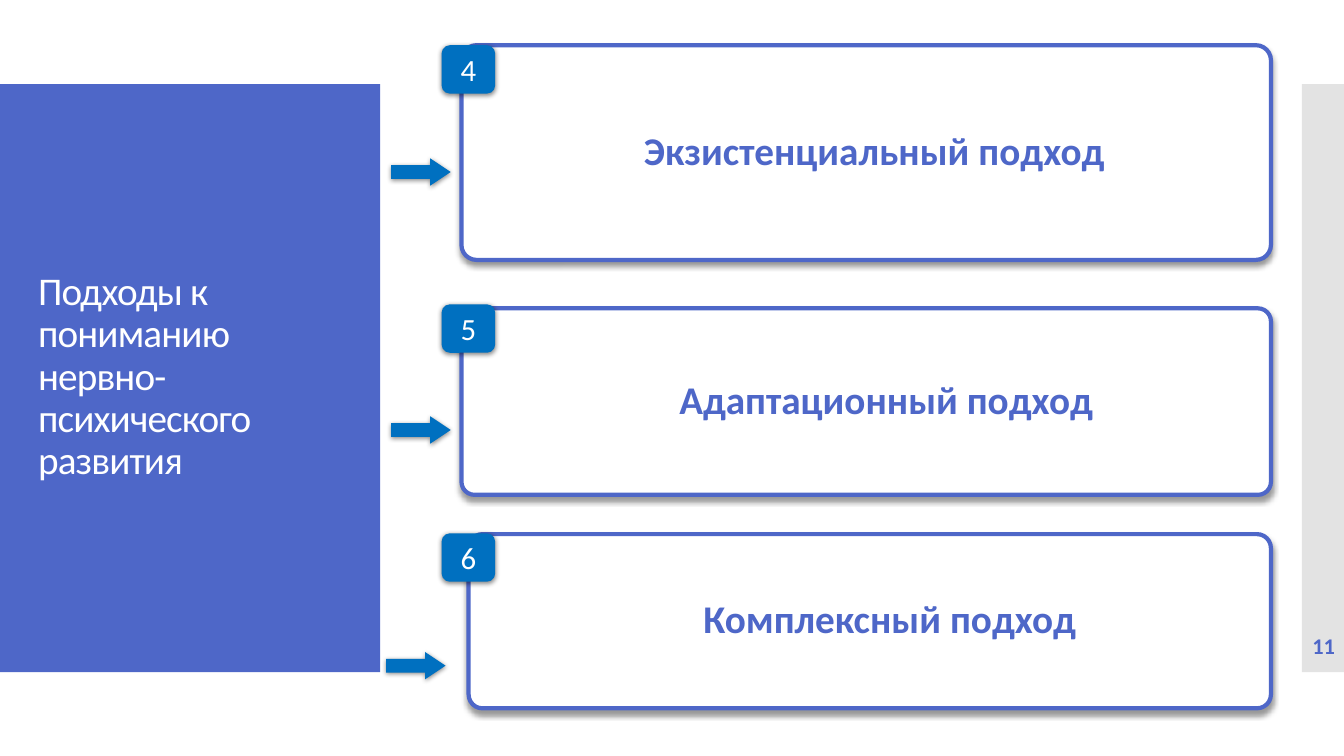
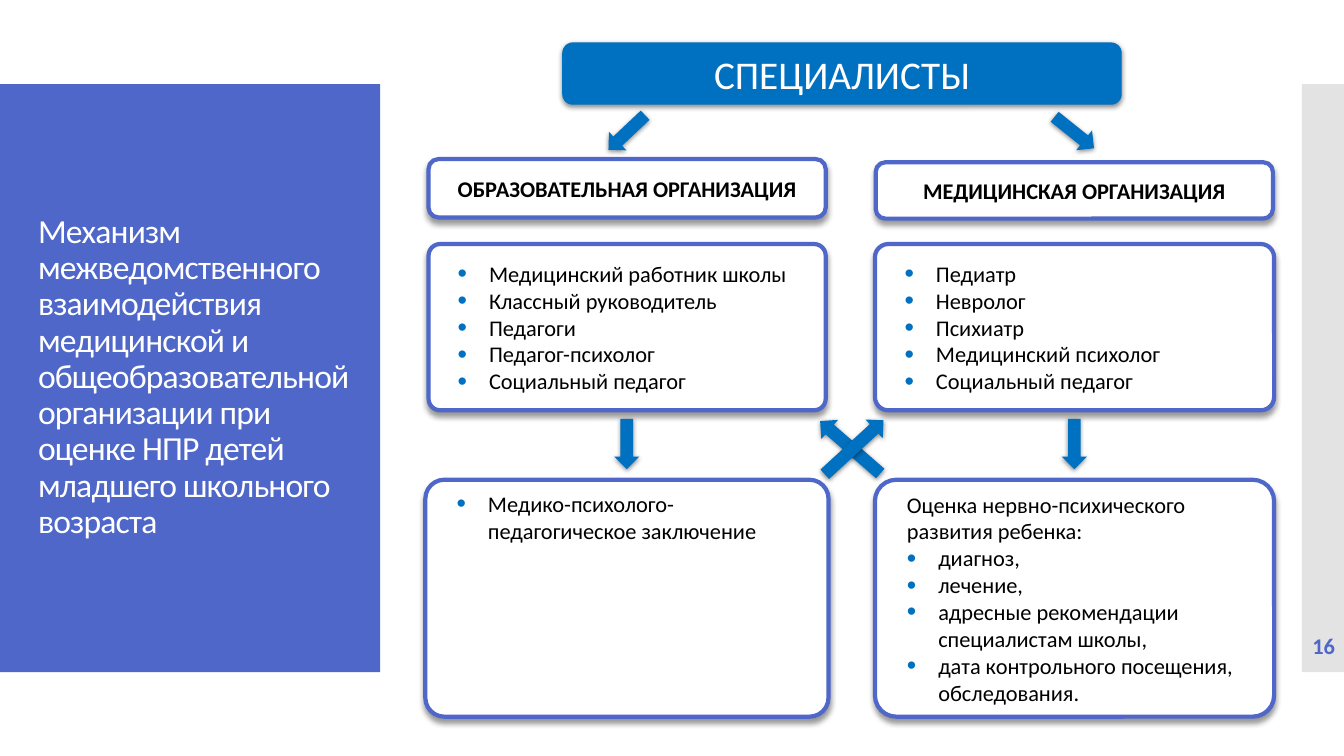
from dataclasses import dataclass
from lxml.etree import SubElement as Sub
from pptx import Presentation
from pptx.dml.color import RGBColor as Rgb
from pptx.enum.shapes import MSO_SHAPE as Form
from pptx.enum.text import MSO_ANCHOR as Anchor, PP_ALIGN as Align
from pptx.oxml.ns import qn
from pptx.util import Cm, Pt


@dataclass(frozen=True)
class Theme:
    """Colours, type sizes and shadows of the deck."""
    face: str = "Calibri"
    main: str = "4E67C8"
    deep: str = "0070C0"
    pale: str = "C8C8C8"
    white: str = "FFFFFF"
    black: str = "000000"
    large: int = 28
    title: int = 24
    badge: int = 22
    body: int = 16
    border: int = 3
    soft: tuple = (40, 4, 3)
    tight: tuple = (45, 3.5, 1.1)


def apply(item, vals):
    """Set each named value on an item."""
    for name, val in vals.items():
        setattr(item, name, val)


class Deck:
    """Hold the style and the current slide."""

    def __init__(self, theme):
        """Start an empty wide deck."""
        self.look = theme
        self.file = Presentation()
        apply(self.file, {"slide_width": Cm(33.87), "slide_height": Cm(19.05)})
        self.slide = None

    def page(self, title, size, width, number):
        """Add a slide with its title panel and number strip."""
        look = self.look
        self.slide = self.file.slides.add_slide(self.file.slide_layouts[6])
        self.shape(Form.RECTANGLE, (0, 2.12, 9.58, 14.82), look.main)
        strip = self.shape(Form.RECTANGLE, (32.81, 2.12, 1.06, 14.82), look.pale)
        tint = strip._element.spPr.find(qn("a:solidFill"))[0]
        Sub(tint, qn("a:alpha"), val="50000")
        head = self.box((0.71, 3.12, width, 12.78))
        self.text(head, [title], size, look.white,
                  para={"alignment": Align.LEFT, "line_spacing": 0.9})
        for run in head.text_frame.paragraphs[0].runs:
            run.font._element.set("spc", "-60")
        mark = self.box((32.84, 15.75, 1.04, 1.02))
        edges = ("left", "top", "right", "bottom")
        apply(mark.text_frame, {f"margin_{edge}": 0 for edge in edges})
        self.text(mark, [number], look.body, look.main, bold=True)

    def box(self, area):
        """Add an empty text box."""
        return self.slide.shapes.add_textbox(*map(Cm, area))

    def shape(self, form, area, fill, adj=(), line=None, shade=None, turn=0):
        """Add a filled shape with optional border and shadow."""
        item = self.slide.shapes.add_shape(form, *map(Cm, area))
        item.rotation = turn
        for at, val in enumerate(adj):
            item.adjustments[at] = val
        item.fill.solid()
        item.fill.fore_color.rgb = Rgb.from_string(fill)
        if line:
            item.line.color.rgb = Rgb.from_string(line)
            item.line.width = Pt(self.look.border)
        else:
            item.line.fill.background()
        item.shadow.inherit = False
        if shade:
            alpha, blur, dist = shade
            effect = item._element.spPr.find(qn("a:effectLst"))
            cast = Sub(effect, qn("a:outerShdw"), blurRad=str(Pt(blur)),
                       dist=str(Pt(dist)), dir="5400000", rotWithShape="0")
            tone = Sub(cast, qn("a:srgbClr"), val=self.look.black)
            Sub(tone, qn("a:alpha"), val=str(alpha * 1000))
        return item

    def text(self, item, lines, size, ink, bold=False, para=None,
             anchor=Anchor.MIDDLE, start=None, indent=0):
        """Fill a shape with paragraphs, bulleted from a start index."""
        frame = item.text_frame
        apply(frame, {"word_wrap": True, "vertical_anchor": anchor})
        for at, line in enumerate(lines):
            part = frame.add_paragraph() if at else frame.paragraphs[0]
            part.text = line
            apply(part, {"alignment": Align.CENTER, **(para or {})})
            for run in part.runs:
                apply(run.font, {"name": self.look.face, "size": Pt(size), "bold": bold})
                run.font.color.rgb = Rgb.from_string(ink)
            if start is not None and at >= start:
                self.bullet(part)
            elif indent:
                part._p.get_or_add_pPr().set("marL", str(Cm(indent)))

    def bullet(self, part):
        """Give a paragraph a round bullet and hanging indent."""
        props = part._p.get_or_add_pPr()
        props.set("marL", str(Cm(1.19)))
        props.set("indent", str(Cm(-0.79)))
        Sub(Sub(props, qn("a:buClr")), qn("a:srgbClr"), val=self.look.deep)
        Sub(props, qn("a:buSzPct"), val="120000")
        Sub(props, qn("a:buFont"), typeface="Arial")
        Sub(props, qn("a:buChar"), char="•")

    def card(self, area, adj, lines, size, ink, **form):
        """Add a white rounded card with a border."""
        look = self.look
        item = self.shape(Form.ROUNDED_RECTANGLE, area, look.white, (adj,), look.main, look.soft)
        self.text(item, lines, size, ink, **form)

    def badge(self, area, line, size):
        """Add a solid rounded label."""
        look = self.look
        item = self.shape(Form.ROUNDED_RECTANGLE, area, look.deep, (0.17,), shade=look.tight)
        self.text(item, [line], size, look.white)

    def list(self, area, adj, lines, start=0, anchor=Anchor.MIDDLE):
        """Add a card with bulleted lines."""
        self.card(area, adj, lines, self.look.body, self.look.black, start=start,
                  anchor=anchor, indent=0.4, para={"alignment": Align.LEFT})

    def arrow(self, area, turn=0, tip=0.5):
        """Add a block arrow."""
        look = self.look
        self.shape(Form.RIGHT_ARROW, area, look.deep, (0.5, tip), shade=look.tight, turn=turn)


def views(deck):
    """Build the slide of approaches."""
    look = deck.look
    deck.page("Подходы к пониманию\vнервно-психического развития", look.large, 8.18, "11")
    rows = [
        ("4", "Экзистенциальный подход", (11.63, 1.14, 20.4, 5.41), 0.07, 0.4, 1.14, (9.86, 3.99)),
        ("5", "Адаптационный подход", (11.63, 7.77, 20.4, 4.7), 0.07, 1, 7.67, (9.86, 10.49)),
        ("6", "Комплексный подход", (11.81, 13.46, 20.22, 4.39), 0.08, 1, 13.44, (9.73, 16.43)),
    ]
    for mark, name, area, adj, indent, top, spot in rows:
        deck.card(area, adj, [name], look.large, look.main, bold=True,
                  indent=indent, para={"line_spacing": 0.9})
        deck.arrow((*spot, 1.5, 0.69), tip=0.75)
        deck.badge((11.13, top, 1.35, 1.22), mark, look.badge)


def teams(deck):
    """Build the slide of specialists."""
    look = deck.look
    deck.page("Механизм межведомственного взаимодействия медицинской и "
              "общеобразовательной организации при оценке НПР детей "
              "младшего школьного возраста", look.title, 8.59, "16")
    deck.badge((14.17, 1.07, 14.1, 1.57), "СПЕЦИАЛИСТЫ", look.large)
    heads = [
        ("ОБРАЗОВАТЕЛЬНАЯ ОРГАНИЗАЦИЯ", (10.8, 4.01, 10.01, 1.47)),
        ("МЕДИЦИНСКАЯ ОРГАНИЗАЦИЯ", (22.07, 4.09, 10.01, 1.42)),
    ]
    for name, area in heads:
        deck.card(area, 0.17, [name], look.body, look.black, bold=True)
    deck.list((10.8, 6.15, 10.01, 4.19), 0.07, [
        "Медицинский работник школы", "Классный руководитель", "Педагоги",
        "Педагог-психолог", "Социальный педагог"])
    deck.list((22.05, 6.15, 10.06, 4.19), 0.08, [
        "Педиатр", "Невролог", "Психиатр", "Медицинский психолог", "Социальный педагог"])
    deck.list((10.72, 12.09, 10.16, 5.97), 0.08,
              ["Медико-психолого-педагогическое заключение"], anchor=Anchor.TOP)
    deck.list((22.05, 12.09, 10.06, 5.97), 0.09, [
        "Оценка нервно-психического развития ребенка:", "диагноз,", "лечение,",
        "адресные рекомендации специалистам школы,",
        "дата контрольного посещения, обследования."], start=1)
    for left, turn in ((15.16, 136.7), (26.44, 38.6)):
        deck.arrow((left, 3.02, 1.27, 0.64), turn)
        deck.arrow((left, 10.87, 1.27, 0.64), 90)
    for left, turn in ((20.42, 221.1), (20.52, 317.4)):
        deck.arrow((left, 10.95, 2.01, 0.64), turn)


def main():
    """Build and save the deck."""
    deck = Deck(Theme())
    views(deck)
    teams(deck)
    deck.file.save("out.pptx")


if __name__ == "__main__":
    main()
